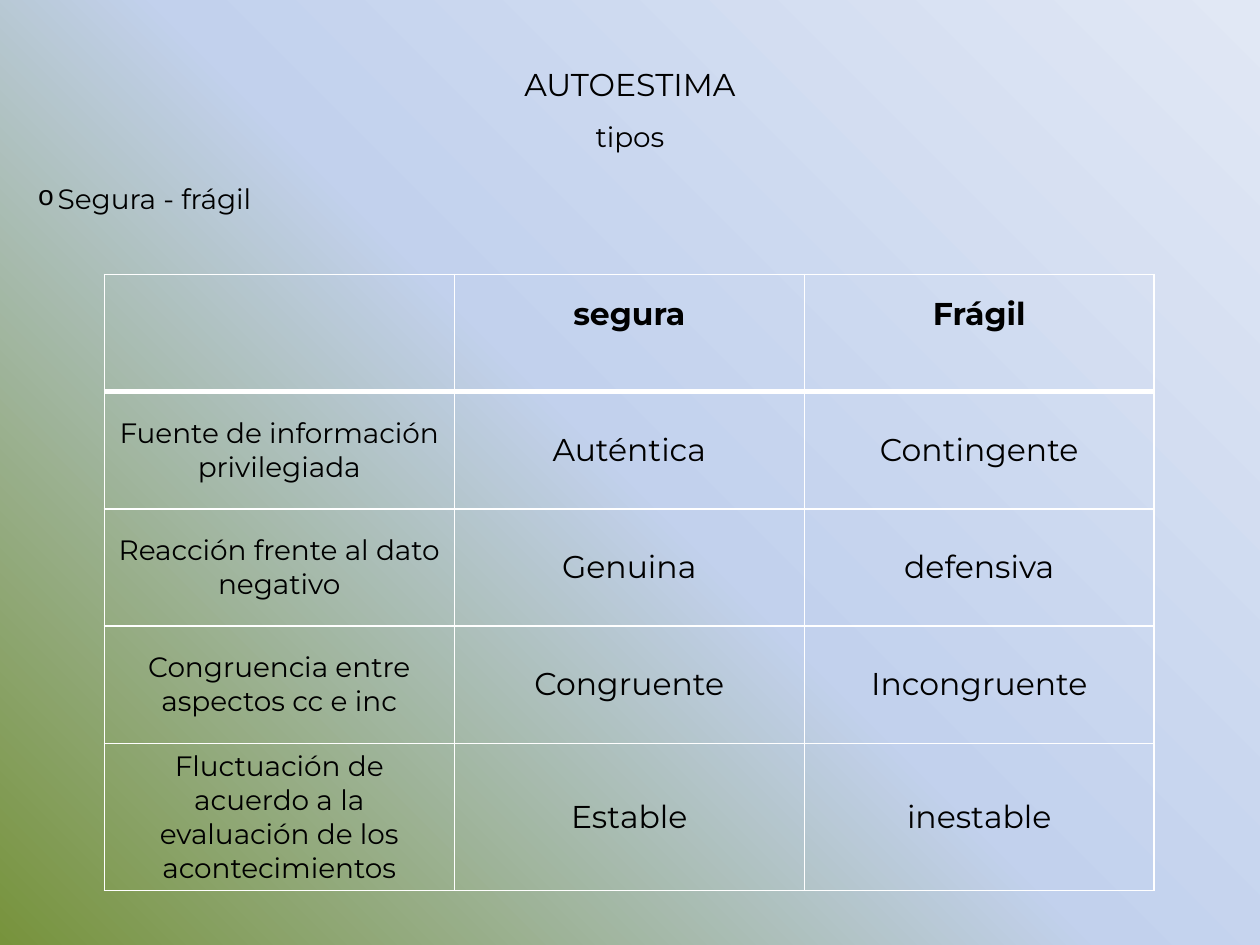
from lxml.etree import SubElement
from pptx import Presentation
from pptx.dml.color import RGBColor
from pptx.enum.text import MSO_ANCHOR, PP_ALIGN
from pptx.oxml import parse_xml
from pptx.oxml.ns import nsdecls, qn
from pptx.util import Pt


def colour(value):
    return RGBColor.from_string(value)


def write(paragraph, text, size=18, bold=False, align=PP_ALIGN.CENTER, spacing=1.0):
    paragraph.alignment = align
    paragraph.line_spacing = spacing
    span = paragraph.add_run()
    span.text = text
    span.font.name = "Montserrat"
    span.font.size = Pt(size)
    span.font.bold = bold
    span.font.color.rgb = colour("000000")


deck = Presentation()
deck.slide_width, deck.slide_height = Pt(720), Pt(540)
page = deck.slides.add_slide(deck.slide_layouts[5])

stops = [(0, "77933C"), (50, "C2D1ED"), (100, "E1E8F5")]
stop_xml = "".join(
    f'<a:gs pos="{position * 1000}"><a:srgbClr val="{value}"/></a:gs>'
    for position, value in stops
)
page.background.fill.solid()
solid = page.background._cSld.find(".//" + qn("a:solidFill"))
solid.getparent().replace(solid, parse_xml(
    f'<a:gradFill {nsdecls("a")} rotWithShape="1"><a:gsLst>{stop_xml}</a:gsLst>'
    '<a:path path="circle"><a:fillToRect t="100000" r="100000"/></a:path></a:gradFill>'
))

title = page.shapes.title
title.left, title.top, title.width, title.height = Pt(20), Pt(23), Pt(680), Pt(69)
heading = title.text_frame
heading.vertical_anchor = MSO_ANCHOR.TOP
write(heading.paragraphs[0], "AUTOESTIMA", spacing=1.5)
write(heading.add_paragraph(), "tipos", size=16, spacing=1.5)

box = page.shapes.add_textbox(Pt(14.4), Pt(100), Pt(436), Pt(26.6))
box.text_frame.word_wrap = True
item = box.text_frame.paragraphs[0]
write(item, "Segura - frágil", size=16, align=PP_ALIGN.JUSTIFY)
properties = item._p.get_or_add_pPr()
properties.set("marL", str(Pt(11.5)))
properties.set("indent", str(-Pt(11.5)))
SubElement(properties, qn("a:buFont"), typeface="Courier New")
SubElement(properties, qn("a:buChar"), char="o")

rows = [
    ("", "segura", "Frágil"),
    ("Fuente de información privilegiada", "Auténtica", "Contingente"),
    ("Reacción frente al dato negativo", "Genuina", "defensiva"),
    ("Congruencia entre aspectos cc e inc", "Congruente", "Incongruente"),
    ("Fluctuación de acuerdo a la evaluación de los acontecimientos", "Estable", "inestable"),
]
table = page.shapes.add_table(5, 3, Pt(59.6), Pt(156.8), Pt(600), Pt(335)).table
table.horz_banding = False
for column in table.columns:
    column.width = Pt(200)
for row_index, texts in enumerate(rows):
    table.rows[row_index].height = Pt(67)
    for column_index, text in enumerate(texts):
        cell = table.cell(row_index, column_index)
        cell.vertical_anchor = MSO_ANCHOR.MIDDLE
        if row_index == 0:
            cell.margin_bottom = Pt(25)
        if text:
            write(cell.text_frame.paragraphs[0], text,
                  size=18 if column_index else 16, bold=row_index == 0)
        for side in ("lnL", "lnR", "lnT", "lnB"):
            thick = (row_index, side) in [(0, "lnB"), (1, "lnT")]
            border = SubElement(cell._tc.get_or_add_tcPr(), qn("a:" + side),
                                w=str(Pt(3 if thick else 1)))
            SubElement(SubElement(border, qn("a:solidFill")), qn("a:srgbClr"), val="FFFFFF")
        cell.fill.background()

deck.save("out.pptx")
